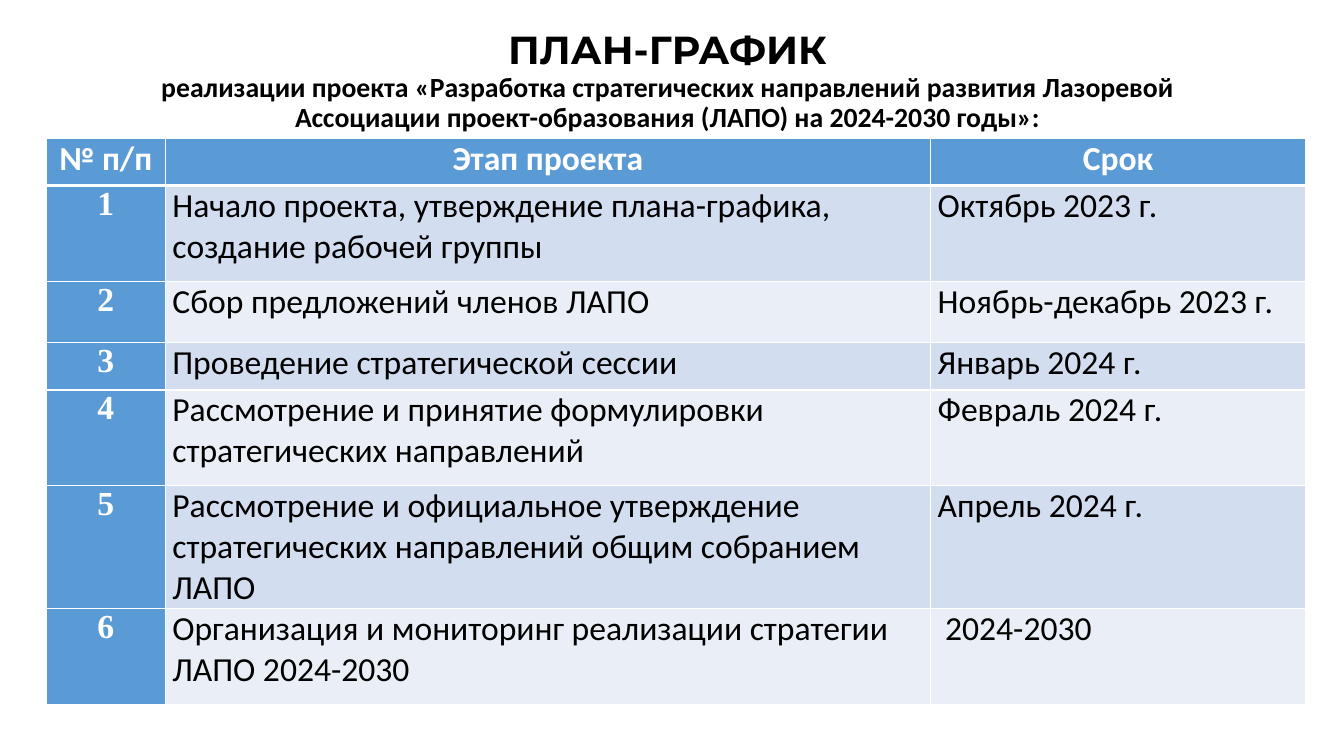
from lxml.etree import SubElement
from pptx import Presentation
from pptx.dml.color import RGBColor
from pptx.enum.text import MSO_ANCHOR, MSO_AUTO_SIZE, PP_ALIGN
from pptx.oxml.ns import qn
from pptx.util import Inches, Pt

COLUMN_WIDTHS = (1.18, 7.59, 3.72)
ROW_HEIGHTS = (0.47, 0.95, 0.61, 0.47, 0.95, 1.17, 0.95)
HEADINGS = ("№ п/п", "Этап проекта", "Срок")
STAGES = (
    ("Начало проекта, утверждение плана-графика, создание рабочей группы", "Октябрь 2023 г."),
    ("Сбор предложений членов ЛАПО", "Ноябрь-декабрь 2023 г."),
    ("Проведение стратегической сессии", "Январь 2024 г."),
    ("Рассмотрение и принятие формулировки стратегических направлений", "Февраль 2024 г."),
    ("Рассмотрение и официальное утверждение стратегических направлений общим собранием ЛАПО",
     "Апрель 2024 г."),
    ("Организация и мониторинг реализации стратегии ЛАПО 2024-2030", " 2024-2030"),
)


def rgb(hex_code):
    return RGBColor.from_string(hex_code)


class PlanSlide:
    white, black, accent = "FFFFFF", "000000", "5B9BD5"
    bands = ("D2DEEF", "EAEFF7")
    body_font, number_font, heading_font = "Calibri", "Times New Roman", "Montserrat"

    def __init__(self, slide):
        self.slide = slide

    def style(self, paragraph, font, size, color, bold, align):
        paragraph.alignment = align
        paragraph.font.name = font
        paragraph.font.size = Pt(size)
        paragraph.font.bold = bold
        paragraph.font.color.rgb = rgb(color)

    def title(self, heading, subtitle):
        title = self.slide.shapes.title
        title.left, title.top = Inches(0.82), Inches(0.24)
        title.width, title.height = Inches(11.6), Inches(1.06)
        frame = title.text_frame
        frame.word_wrap = True
        frame.auto_size = MSO_AUTO_SIZE.NONE
        frame.vertical_anchor = MSO_ANCHOR.MIDDLE
        frame.margin_top = Inches(0.14)
        frame.text = f"{heading}\n{subtitle}"
        fonts = ((self.heading_font, 27.9), (self.body_font, 19.8))
        for paragraph, (font, size) in zip(frame.paragraphs, fonts):
            self.style(paragraph, font, size, self.black, True, PP_ALIGN.CENTER)
            paragraph.line_spacing = 0.9

    def borders(self, cell, **widths):
        """Draw white cell edges; widths are points keyed by L, R, T and B."""
        properties = cell._tc.get_or_add_tcPr()
        for side, width in widths.items():
            line = SubElement(properties, qn(f"a:ln{side}"), w=str(Pt(width)))
            fill = SubElement(line, qn("a:solidFill"))
            SubElement(fill, qn("a:srgbClr"), val=self.white)

    def cell(self, cell, text, row, column):
        header = row == 0
        strong = header or column == 0
        cell.margin_left = cell.margin_right = Inches(0.07)
        cell.margin_top = cell.margin_bottom = 0
        self.borders(cell, L=1, R=1, T=3 if row == 1 else 1, B=3 if header else 1)
        cell.fill.solid()
        cell.fill.fore_color.rgb = rgb(self.accent if strong else self.bands[(row - 1) % 2])
        cell.text = text
        self.style(
            cell.text_frame.paragraphs[0],
            self.number_font if column == 0 and not header else self.body_font,
            24,
            self.white if strong else self.black,
            strong,
            PP_ALIGN.CENTER if strong else PP_ALIGN.LEFT,
        )

    def schedule(self, rows):
        table = self.slide.shapes.add_table(
            len(rows), len(COLUMN_WIDTHS), Inches(0.46), Inches(1.37),
            Inches(sum(COLUMN_WIDTHS)), Inches(sum(ROW_HEIGHTS)),
        ).table
        for column, width in zip(table.columns, COLUMN_WIDTHS):
            column.width = Inches(width)
        for row, height in zip(table.rows, ROW_HEIGHTS):
            row.height = Inches(height)
        for r, texts in enumerate(rows):
            for c, text in enumerate(texts):
                self.cell(table.cell(r, c), text, r, c)


def main():
    presentation = Presentation()
    presentation.slide_width = Inches(13.33)
    presentation.slide_height = Inches(7.5)
    title_only = presentation.slide_layouts[5]
    plan = PlanSlide(presentation.slides.add_slide(title_only))
    plan.title(
        "ПЛАН-ГРАФИК",
        "реализации проекта «Разработка стратегических направлений развития Лазоревой "
        "Ассоциации проект-образования (ЛАПО) на 2024-2030 годы»:",
    )
    numbered = [(str(number), *stage) for number, stage in enumerate(STAGES, 1)]
    plan.schedule([HEADINGS, *numbered])
    presentation.save("out.pptx")


if __name__ == "__main__":
    main()
